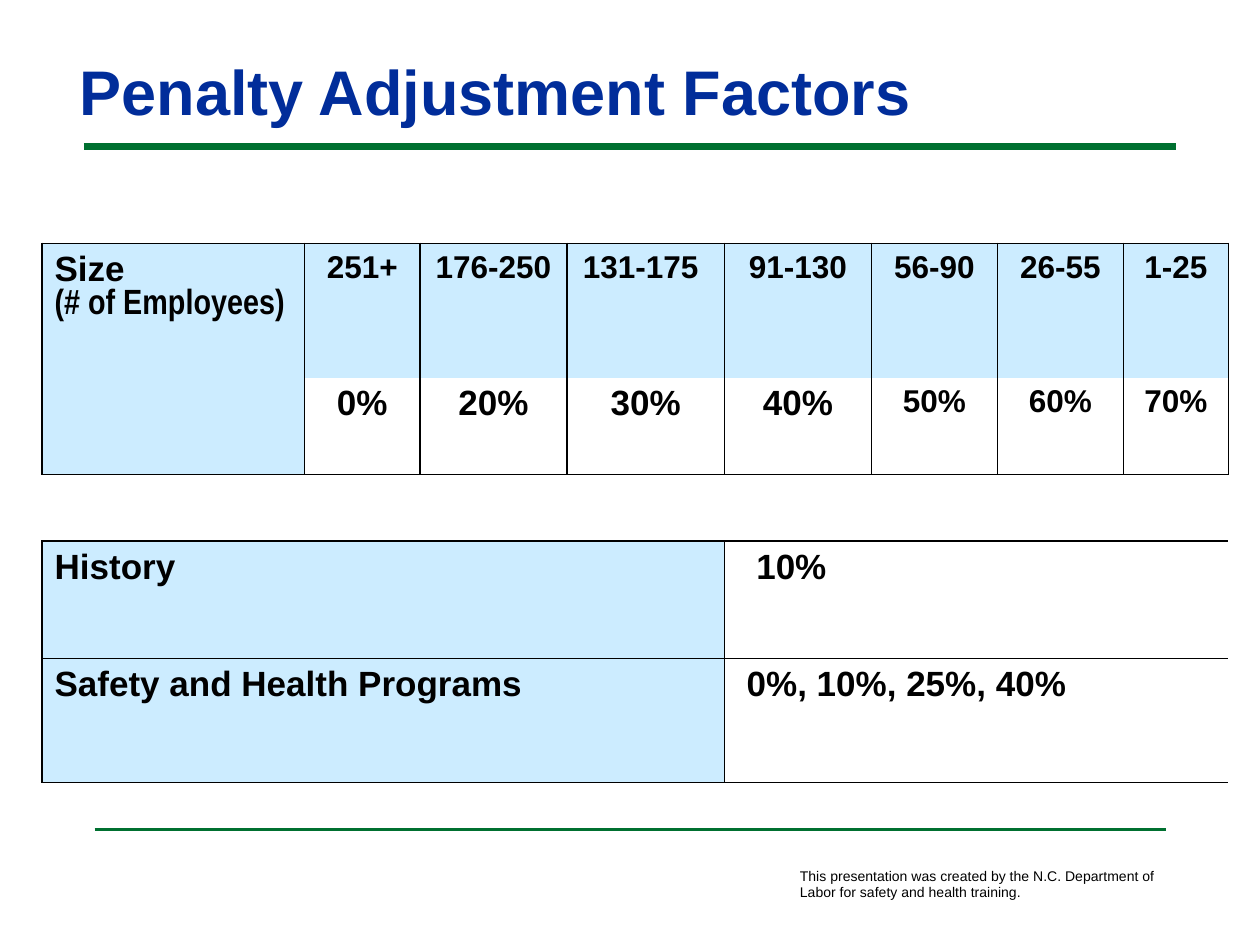
from lxml.etree import SubElement
from pptx import Presentation
from pptx.dml.color import RGBColor
from pptx.enum.shapes import MSO_CONNECTOR
from pptx.enum.text import MSO_ANCHOR, PP_ALIGN
from pptx.oxml.ns import qn
from pptx.util import Pt

BLACK = RGBColor(0x00, 0x00, 0x00)
BLUE = RGBColor(0x01, 0x2D, 0x9A)
GREEN = RGBColor(0x00, 0x70, 0x30)
PALE_BLUE = RGBColor(0xCC, 0xEC, 0xFF)

COLUMN_WIDTHS = [150, 66, 84, 90, 84, 72, 72, 60]
ROW_HEIGHTS = [77, 48, 38, 67, 71]
# Employees, adjustment, text size of the adjustment
SIZE_FACTORS = [
    ("251+", "0%", 20), ("176-250", "20%", 20), ("131-175", "30%", 20),
    ("91-130", "40%", 20), ("56-90", "50%", 18), ("26-55", "60%", 18),
    ("1-25", "70%", 18),
]
# Factor, adjustment, indent of the adjustment
OTHER_FACTORS = [("History", "10%", 11),
                 ("Safety and Health Programs", "0%, 10%, 25%, 40%", 5.5)]


def style(para, size, color=BLACK, bold=True, name="Arial"):
    font = para.font
    font.name, font.size, font.bold = name, Pt(size), bold
    font.color.rgb = color


def add_rule(page, left, top, width, weight):
    line = page.shapes.add_connector(MSO_CONNECTOR.STRAIGHT, Pt(left), Pt(top),
                                     Pt(left + width), Pt(top))
    line.line.color.rgb = GREEN
    line.line.width = Pt(weight)
    SubElement(line._element.spPr, qn("a:effectLst"))


def add_title(page, left, top, width, height):
    title = page.shapes.title
    title.left, title.top, title.width, title.height = map(Pt, (left, top, width, height))
    frame = title.text_frame
    frame.margin_left = frame.margin_right = Pt(3.6)
    frame.margin_top = frame.margin_bottom = 0
    frame.vertical_anchor = MSO_ANCHOR.BOTTOM
    frame.text = "Penalty Adjustment Factors"
    para = frame.paragraphs[0]
    para.alignment = PP_ALIGN.LEFT
    style(para, 36, BLUE)


def add_credit(page, left, top, width, height):
    box = page.shapes.add_textbox(Pt(left), Pt(top), Pt(width), Pt(height))
    frame = box.text_frame
    frame.word_wrap = True
    frame.text = ("This presentation was created by the N.C. Department of "
                  "Labor for safety and health training.")
    style(frame.paragraphs[0], 8, bold=False)


def set_borders(cell, sides):
    """Draw the named sides (of L, R, T, B) and hide the others."""
    props = cell._tc.get_or_add_tcPr()
    for index, side in enumerate("LRTB"):
        edge = props.makeelement(qn(f"a:ln{side}"), {"w": str(Pt(1))})
        if side in sides:
            fill = SubElement(edge, qn("a:solidFill"))
            SubElement(fill, qn("a:srgbClr"), val=str(BLACK))
        else:
            SubElement(edge, qn("a:noFill"))
        props.insert(index, edge)


def paint(cell, color=None):
    if color is None:
        cell.fill.background()
    else:
        cell.fill.solid()
        cell.fill.fore_color.rgb = color


def write(cell, text, size, align=PP_ALIGN.LEFT):
    cell.text = text
    para = cell.text_frame.paragraphs[0]
    para.alignment = align
    style(para, size)


def add_factor_table(page, left, top):
    table = page.shapes.add_table(
        len(ROW_HEIGHTS), len(COLUMN_WIDTHS), Pt(left), Pt(top),
        Pt(sum(COLUMN_WIDTHS)), Pt(sum(ROW_HEIGHTS))).table
    table.first_row = table.horz_banding = False
    for column, width in zip(table.columns, COLUMN_WIDTHS):
        column.width = Pt(width)
    for row, height in zip(table.rows, ROW_HEIGHTS):
        row.height = Pt(height)

    # Size of the employer
    label = table.cell(0, 0)
    label.merge(table.cell(1, 0))
    write(label, "Size", 20)
    para = label.text_frame.add_paragraph()
    para.text = "(# of Employees)"
    style(para, 20, name="Arial Narrow")
    for row, sides in enumerate(("LRT", "LRB")):
        paint(table.cell(row, 0), PALE_BLUE)
        set_borders(table.cell(row, 0), sides)

    for column, (employees, percent, size) in enumerate(SIZE_FACTORS, 1):
        head, value = table.cell(0, column), table.cell(1, column)
        write(head, employees, 18, PP_ALIGN.CENTER)
        write(value, percent, size, PP_ALIGN.CENTER)
        paint(head, PALE_BLUE)
        paint(value)
        set_borders(head, "LRT")
        set_borders(value, "LRB")
    table.cell(0, 3).margin_right = Pt(13)

    # Gap between the two parts
    last = len(COLUMN_WIDTHS) - 1
    table.cell(2, 0).merge(table.cell(2, last))
    for column in range(last + 1):
        paint(table.cell(2, column))
        set_borders(table.cell(2, column), "TB")

    # History and programs
    for row, (factor, percent, indent) in enumerate(OTHER_FACTORS, 3):
        for start, text, color in ((0, factor, PALE_BLUE), (4, percent, None)):
            table.cell(row, start).merge(table.cell(row, start + 3))
            write(table.cell(row, start), text, 20)
            for offset, sides in enumerate(("LTB", "TB", "TB", "RTB")):
                paint(table.cell(row, start + offset), color)
                set_borders(table.cell(row, start + offset), sides)
        table.cell(row, 4).margin_left = Pt(7.2 + indent)


def main():
    deck = Presentation()
    deck.slide_width, deck.slide_height = Pt(720), Pt(540)
    page = deck.slides.add_slide(deck.slide_layouts[5])
    add_rule(page, 48, 84, 624, 4)
    add_rule(page, 54, 474, 612, 2)
    add_credit(page, 450, 492, 234, 26.5)
    add_title(page, 42, 30, 648, 43.5)
    add_factor_table(page, 24, 139)
    deck.save("out.pptx")


if __name__ == "__main__":
    main()
